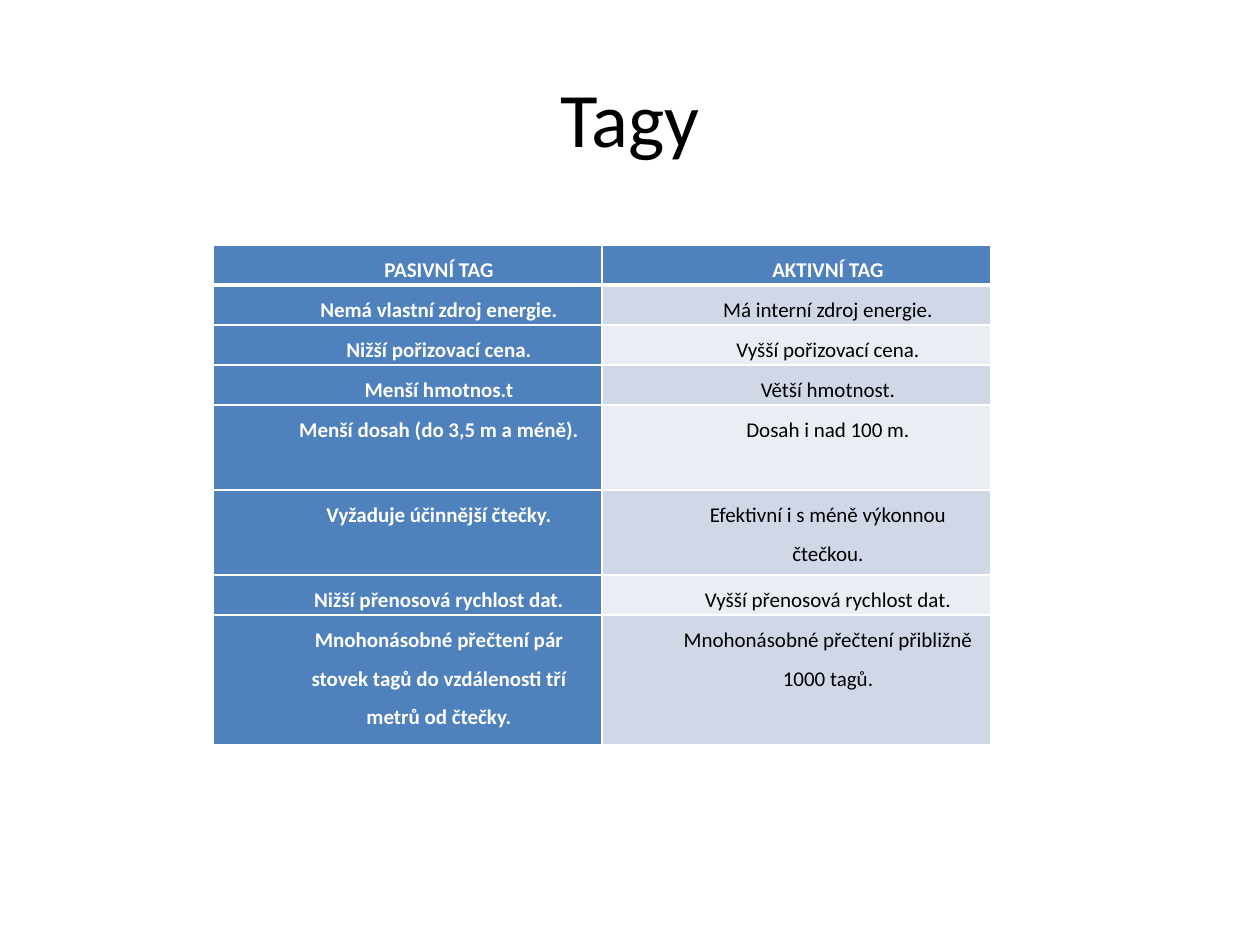
from dataclasses import dataclass

from lxml.etree import SubElement
from pptx import Presentation
from pptx.dml.color import RGBColor
from pptx.enum.text import MSO_ANCHOR, PP_ALIGN
from pptx.oxml.ns import qn
from pptx.util import Pt

EMU_PER_PX = 914400 / 126


def px(length):
    return round(length * EMU_PER_PX)


@dataclass(frozen=True)
class Theme:
    font: str = "Calibri"
    title_size: int = 44
    body_size: int = 12
    dark: str = "000000"
    light: str = "FFFFFF"
    accent: str = "4F81BD"
    bands: tuple = ("D0D8E8", "E9EDF4")
    thin_rule: int = 1
    header_rule: int = 3


THEME = Theme()

TAG_COMPARISON = [
    ("PASIVNÍ TAG", "AKTIVNÍ TAG"),
    ("Nemá vlastní zdroj energie.", "Má interní zdroj energie."),
    ("Nižší pořizovací cena.", "Vyšší pořizovací cena."),
    ("Menší hmotnos.t", "Větší hmotnost."),
    ("Menší dosah (do 3,5 m a méně).", "Dosah i nad 100 m."),
    ("Vyžaduje účinnější čtečky.", "Efektivní i s méně výkonnou čtečkou."),
    ("Nižší přenosová rychlost dat.", "Vyšší přenosová rychlost dat."),
    (
        "Mnohonásobné přečtení pár stovek tagů do vzdálenosti tří metrů od čtečky.",
        "Mnohonásobné přečtení přibližně 1000 tagů.",
    ),
]
ROW_HEIGHTS = [40, 40, 40, 40, 85, 85, 40, 130]


def format_runs(paragraph, size, color, bold):
    for run in paragraph.runs:
        run.font.name = THEME.font
        run.font.size = Pt(size)
        run.font.bold = bold
        run.font.color.rgb = RGBColor.from_string(color)


def add_title(slide, box, wording):
    title = slide.shapes.title
    title.left, title.top, title.width, title.height = map(px, box)
    title.text_frame.text = wording
    title.text_frame.vertical_anchor = MSO_ANCHOR.MIDDLE
    heading = title.text_frame.paragraphs[0]
    heading.alignment = PP_ALIGN.CENTER
    format_runs(heading, THEME.title_size, THEME.dark, False)


def set_borders(cell, row):
    widths = {
        "a:lnL": THEME.thin_rule,
        "a:lnR": THEME.thin_rule,
        "a:lnT": THEME.header_rule if row == 1 else THEME.thin_rule,
        "a:lnB": THEME.header_rule if row == 0 else THEME.thin_rule,
    }
    properties = cell._tc.get_or_add_tcPr()
    for side, width in widths.items():
        border = SubElement(properties, qn(side), w=str(Pt(width)))
        fill = SubElement(border, qn("a:solidFill"))
        SubElement(fill, qn("a:srgbClr"), val=THEME.light)


def fill_cell(cell, row, column, wording):
    emphasized = row == 0 or column == 0
    cell.margin_left = cell.margin_right = px(9)
    cell.margin_top = cell.margin_bottom = 0
    set_borders(cell, row)
    background = THEME.accent if emphasized else THEME.bands[(row - 1) % 2]
    cell.fill.solid()
    cell.fill.fore_color.rgb = RGBColor.from_string(background)
    cell.text_frame.text = wording
    statement = cell.text_frame.paragraphs[0]
    statement.alignment = PP_ALIGN.CENTER
    statement.line_spacing = 1.5
    statement.space_before = Pt(6)
    indents = statement._p.get_or_add_pPr()
    indents.set("marL", str(px(63)))
    indents.set("indent", "0")
    color = THEME.light if emphasized else THEME.dark
    format_runs(statement, THEME.body_size, color, emphasized)


def add_comparison(slide, box, rows, heights):
    column_count = len(rows[0])
    frame = slide.shapes.add_table(len(rows), column_count, *map(px, box))
    comparison = frame.table
    for column in comparison.columns:
        column.width = px(box[2] / column_count)
    for row, (wordings, height) in enumerate(zip(rows, heights)):
        comparison.rows[row].height = px(height)
        for column, wording in enumerate(wordings):
            fill_cell(comparison.cell(row, column), row, column, wording)


def main():
    deck = Presentation()
    deck.slide_width, deck.slide_height = px(1260), px(945)
    slide = deck.slides.add_slide(deck.slide_layouts[5])
    add_title(slide, (63, 38, 1134, 157), "Tagy")
    add_comparison(slide, (213, 245, 778, sum(ROW_HEIGHTS)), TAG_COMPARISON, ROW_HEIGHTS)
    deck.save("out.pptx")


if __name__ == "__main__":
    main()
